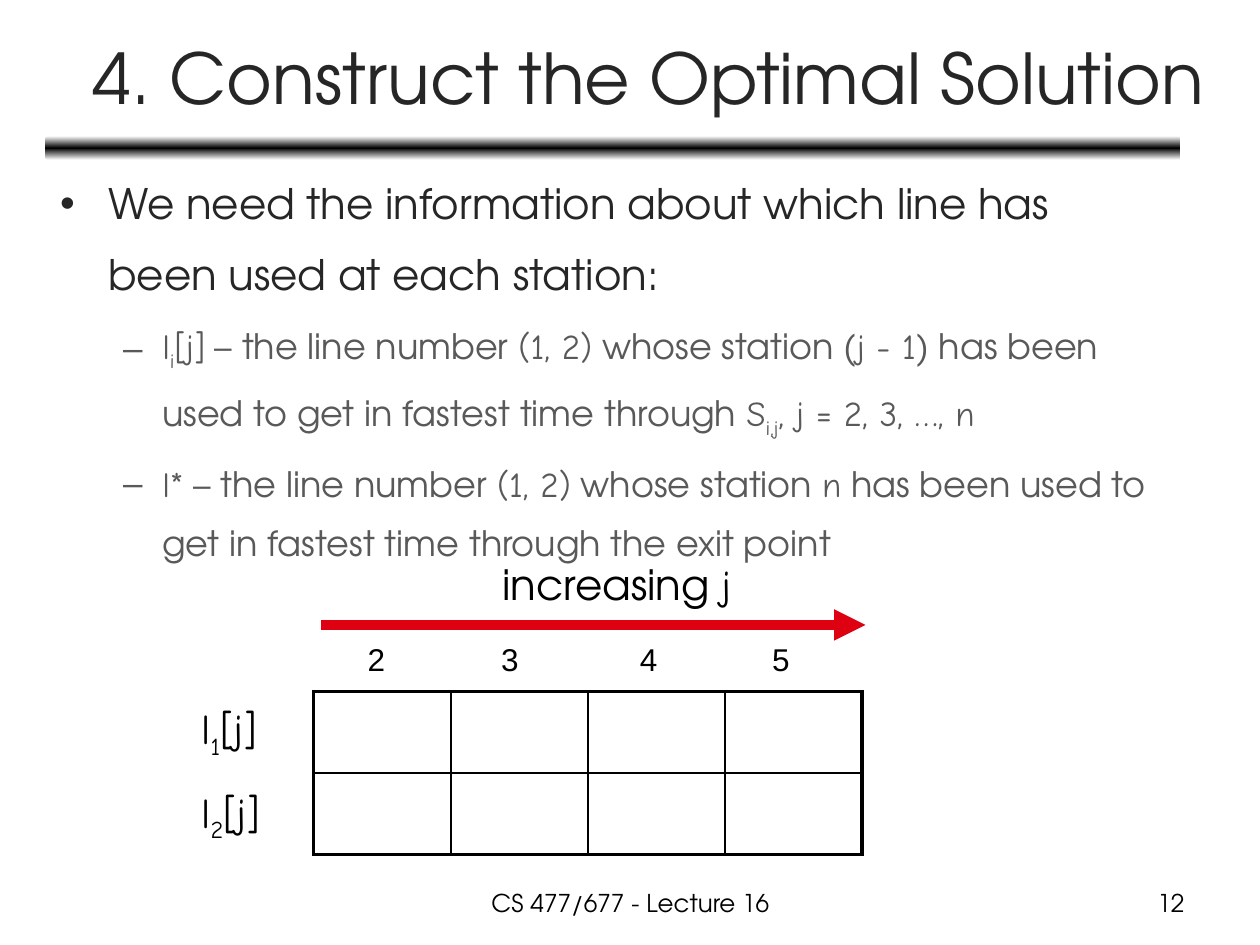
from copy import deepcopy
from dataclasses import dataclass
from typing import NamedTuple

from pptx import Presentation
from pptx.dml.color import RGBColor
from pptx.enum import shapes, text
from pptx.oxml import ns, xmlchemy
from pptx.util import Inches, Pt

SANS, HAND, ARIAL = "TeX Gyre Adventor", "Comic Neue", "Arial"
BLACK, DARK, GREY, WHITE, RED = "000000", "262626", "595959", "FFFFFF", "DD0111"
CENTER, RIGHT = text.PP_ALIGN.CENTER, text.PP_ALIGN.RIGHT


class Run(NamedTuple):
    text: str
    font: str = SANS
    sub: bool = False


@dataclass
class Label:
    box: tuple
    runs: list
    size: float
    color: str = BLACK
    align: object = None
    wrap: bool = False
    anchor: object = text.MSO_ANCHOR.TOP


@dataclass
class Bullet:
    mark: str
    size: float
    color: str
    margin: float
    indent: float
    runs: list


def rgb(value: str) -> RGBColor:
    return RGBColor.from_string(value)


def apply(obj, formats: dict) -> None:
    for name, value in formats.items():
        setattr(obj, name, value)


def child(parent, tag: str, **attrs):
    el = xmlchemy.OxmlElement(tag)
    for name, value in attrs.items():
        el.set(name, str(value))
    parent.append(el)
    return el


def add_runs(p, runs: list, size: float, color: str) -> None:
    for run in runs:
        r = p.add_run()
        r.text = run.text
        apply(r.font, {"name": run.font, "size": Pt(size)})
        r.font.color.rgb = rgb(color)
        if run.sub:
            r._r.get_or_add_rPr().set("baseline", "-25000")


def add_label(s, label: Label) -> None:
    tf = s.shapes.add_textbox(*map(Inches, label.box)).text_frame
    apply(tf, {"word_wrap": label.wrap, "vertical_anchor": label.anchor})
    p = tf.paragraphs[0]
    p.alignment = label.align
    add_runs(p, label.runs, label.size, label.color)


def add_bullets(s, box: tuple, bullets: list) -> None:
    tf = s.shapes.add_textbox(*map(Inches, box)).text_frame
    tf.word_wrap = True
    for i, bullet in enumerate(bullets):
        p = tf.add_paragraph() if i else tf.paragraphs[0]
        apply(p, {"line_spacing": 1.4, "space_before": Pt(bullet.size * 0.2)})
        pPr = p._p.get_or_add_pPr()
        pPr.set("marL", str(Inches(bullet.margin)))
        pPr.set("indent", str(Inches(bullet.indent)))
        child(pPr, "a:buFont", typeface=ARIAL)
        child(pPr, "a:buChar", char=bullet.mark)
        add_runs(p, bullet.runs, bullet.size, bullet.color)


def add_rule(s, box: tuple) -> None:
    sp = s.shapes.add_shape(shapes.MSO_SHAPE.ROUNDED_RECTANGLE, *map(Inches, box))
    sp.shadow.inherit = False
    sp.line.fill.background()
    sp.fill.gradient()
    sp.fill.gradient_angle = 90
    stops = sp._element.spPr.find(".//" + ns.qn("a:gsLst"))
    stops.insert(1, deepcopy(stops[0]))
    for stop, pos, color in zip(sp.fill.gradient_stops, (0, 0.5, 1), (WHITE, BLACK, WHITE)):
        stop.position = pos
        stop.color.rgb = rgb(color)


def add_arrow(s, x1: float, x2: float, y: float) -> None:
    c = s.shapes.add_connector(shapes.MSO_CONNECTOR.STRAIGHT, *map(Inches, (x1, y, x2, y)))
    c.line.width = Pt(6)
    c.line.color.rgb = rgb(RED)
    child(c.line._get_or_add_ln(), "a:tailEnd", type="triangle")
    child(c._element.spPr, "a:effectLst")


def add_grid(s, box: tuple, rows: int, cols: int) -> None:
    table = s.shapes.add_table(rows, cols, *map(Inches, box)).table
    apply(table, {"first_row": False, "horz_banding": False})
    for i in range(rows):
        for j in range(cols):
            cell = table.cell(i, j)
            tcPr = cell._tc.get_or_add_tcPr()
            outer = {"L": j == 0, "R": j == cols - 1, "T": i == 0, "B": i == rows - 1}
            for side, edge in outer.items():
                ln = child(tcPr, f"a:ln{side}", w=Pt(2.25 if edge else 1))
                child(child(ln, "a:solidFill"), "a:srgbClr", val=BLACK)
            cell.fill.background()


BULLETS = [
    Bullet("•", 24, DARK, 0.38, -0.38, [
        Run("We need the information about which line has been used at each station:")]),
    Bullet("–", 20, GREY, 0.81, -0.31, [
        Run("l", HAND), Run("i", HAND, True), Run("[j]", HAND),
        Run(" – the line number "), Run("(1, 2)", HAND),
        Run(" whose station ("), Run("j - 1", HAND),
        Run(") has been used to get in fastest time through "),
        Run("S", HAND), Run("i,j", HAND, True), Run(", j = 2, 3, …, n", HAND)]),
    Bullet("–", 20, GREY, 0.81, -0.31, [
        Run("l*", HAND), Run(" – the line number "), Run("(1, 2)", HAND),
        Run(" whose station "), Run("n", HAND),
        Run(" has been used to get in fastest time through the exit point")]),
]

LABELS = [
    Label((0.37, 0.11, 9.55, 0.99), [Run("4. Construct the Optimal Solution")],
          40, DARK, CENTER, True, text.MSO_ANCHOR.MIDDLE),
    Label((3.89, 4.38, 2.1, 0.51), [Run("increasing "), Run("j", HAND)], 24),
    Label((3.42, 7, 3.17, 0.35), [Run("CS 477/677 - Lecture 16")], 14, align=CENTER, wrap=True),
    Label((7.17, 7, 2.33, 0.35), [Run("12")], 14, align=RIGHT, wrap=True),
]
LABELS += [Label((1.5, y, w, 0.5), [Run("l", HAND), Run(n, HAND, True), Run("[j]", HAND)], 24)
           for n, y, w in (("1", 5.53, 0.78), ("2", 6.19, 0.81))]
LABELS += [Label((x, 5.03, 0.34, 0.4), [Run(str(n), ARIAL)], 18)
           for n, x in enumerate((2.82, 3.88, 4.98, 6.03), 2)]


def main() -> None:
    prs = Presentation()
    apply(prs, {"slide_width": Inches(10), "slide_height": Inches(7.5)})
    s = prs.slides.add_slide(prs.slide_layouts[6])
    add_rule(s, (0.36, 1.08, 9.01, 0.19))
    add_bullets(s, (0.38, 1.2, 9, 3.27), BULLETS)
    add_grid(s, (2.49, 5.49, 4.35, 1.29), 2, 4)
    add_arrow(s, 2.55, 6.87, 4.96)
    for label in LABELS:
        add_label(s, label)
    prs.save("out.pptx")


if __name__ == "__main__":
    main()
